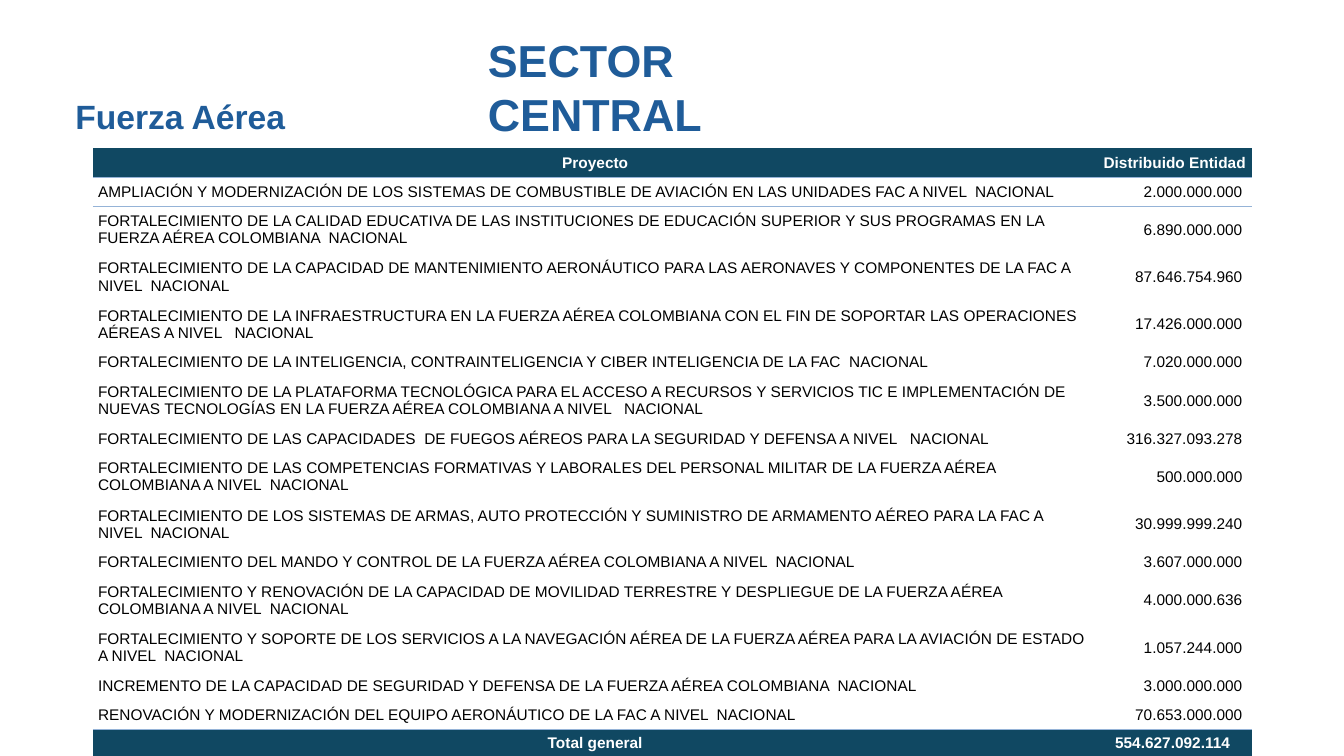
from dataclasses import dataclass

from lxml import etree
from pptx import Presentation
from pptx.dml.color import RGBColor
from pptx.enum.text import MSO_ANCHOR, MSO_AUTO_SIZE, PP_ALIGN
from pptx.oxml.ns import qn
from pptx.util import Cm, Pt

LEFT, MID, RIGHT = PP_ALIGN.LEFT, PP_ALIGN.CENTER, PP_ALIGN.RIGHT
TOP, CENTER = MSO_ANCHOR.TOP, MSO_ANCHOR.MIDDLE
GROW = MSO_AUTO_SIZE.SHAPE_TO_FIT_TEXT
PLAIN = "{2D5ABB26-0587-4C30-8999-92F81FD0307C}"


@dataclass(frozen=True)
class Theme:
    """Colours, font and type sizes of the slide."""
    font: str = "Arial"
    blue: str = "1F5C99"
    band: str = "104862"
    rule: str = "95B3D7"
    white: str = "FFFFFF"
    black: str = "000000"
    head: int = 32
    sub: int = 24
    cell: int = 11


LOOK = Theme()
HEAD = ("Proyecto", "Distribuido Entidad")
TOTAL = ("Total general", "554.627.092.114")
ITEMS = [
    ("AMPLIACIÓN Y MODERNIZACIÓN DE LOS SISTEMAS DE COMBUSTIBLE DE AVIACIÓN EN LAS UNIDADES FAC A NIVEL  NACIONAL", "2.000.000.000"),
    ("FORTALECIMIENTO DE LA CALIDAD EDUCATIVA DE LAS INSTITUCIONES DE EDUCACIÓN SUPERIOR Y SUS PROGRAMAS EN LA FUERZA AÉREA COLOMBIANA  NACIONAL", "6.890.000.000"),
    ("FORTALECIMIENTO DE LA CAPACIDAD DE MANTENIMIENTO AERONÁUTICO PARA LAS AERONAVES Y COMPONENTES DE LA FAC A NIVEL  NACIONAL", "87.646.754.960"),
    ("FORTALECIMIENTO DE LA INFRAESTRUCTURA EN LA FUERZA AÉREA COLOMBIANA CON EL FIN DE SOPORTAR LAS OPERACIONES AÉREAS A NIVEL   NACIONAL", "17.426.000.000"),
    ("FORTALECIMIENTO DE LA INTELIGENCIA, CONTRAINTELIGENCIA Y CIBER INTELIGENCIA DE LA FAC  NACIONAL", "7.020.000.000"),
    ("FORTALECIMIENTO DE LA PLATAFORMA TECNOLÓGICA PARA EL ACCESO A RECURSOS Y SERVICIOS TIC E IMPLEMENTACIÓN DE NUEVAS TECNOLOGÍAS EN LA FUERZA AÉREA COLOMBIANA A NIVEL   NACIONAL", "3.500.000.000"),
    ("FORTALECIMIENTO DE LAS CAPACIDADES  DE FUEGOS AÉREOS PARA LA SEGURIDAD Y DEFENSA A NIVEL   NACIONAL", "316.327.093.278"),
    ("FORTALECIMIENTO DE LAS COMPETENCIAS FORMATIVAS Y LABORALES DEL PERSONAL MILITAR DE LA FUERZA AÉREA COLOMBIANA A NIVEL  NACIONAL", "500.000.000"),
    ("FORTALECIMIENTO DE LOS SISTEMAS DE ARMAS, AUTO PROTECCIÓN Y SUMINISTRO DE ARMAMENTO AÉREO PARA LA FAC A NIVEL  NACIONAL", "30.999.999.240"),
    ("FORTALECIMIENTO DEL MANDO Y CONTROL DE LA FUERZA AÉREA COLOMBIANA A NIVEL  NACIONAL", "3.607.000.000"),
    ("FORTALECIMIENTO Y RENOVACIÓN DE LA CAPACIDAD DE MOVILIDAD TERRESTRE Y DESPLIEGUE DE LA FUERZA AÉREA COLOMBIANA A NIVEL  NACIONAL", "4.000.000.636"),
    ("FORTALECIMIENTO Y SOPORTE DE LOS SERVICIOS A LA NAVEGACIÓN AÉREA DE LA FUERZA AÉREA PARA LA AVIACIÓN DE ESTADO A NIVEL  NACIONAL", "1.057.244.000"),
    ("INCREMENTO DE LA CAPACIDAD DE SEGURIDAD Y DEFENSA DE LA FUERZA AÉREA COLOMBIANA  NACIONAL", "3.000.000.000"),
    ("RENOVACIÓN Y MODERNIZACIÓN DEL EQUIPO AERONÁUTICO DE LA FAC A NIVEL  NACIONAL", "70.653.000.000"),
]


def write(frame, text, size, color, bold=False, align=LEFT):
    """Put one formatted paragraph in a text frame."""
    para = frame.paragraphs[0]
    para.alignment = align
    run = para.add_run()
    run.text = text
    font = run.font
    font.name, font.size, font.bold = LOOK.font, Pt(size), bold
    font.color.rgb = RGBColor.from_string(color)


def place(shape, box, text, size):
    """Set a heading shape in its box and write its text."""
    shape.left, shape.top, shape.width, shape.height = map(Cm, box)
    frame = shape.text_frame
    frame.word_wrap, frame.auto_size = True, GROW
    frame.vertical_anchor = TOP
    write(frame, text, size, LOOK.blue, bold=True)


def edge(cell, tag):
    """Draw a thin rule on one side of a table cell."""
    line = etree.Element(qn(tag), w=str(Pt(0.75)))
    fill = etree.SubElement(line, qn("a:solidFill"))
    etree.SubElement(fill, qn("a:srgbClr"), val=LOOK.rule)
    cell.find(qn("a:tcPr")).insert(0, line)


def style(cell, text, band, align):
    """Fill and write one table cell."""
    cell.margin_left = cell.margin_right = Cm(0.13)
    cell.margin_top = cell.margin_bottom = Cm(0.13)
    cell.vertical_anchor = CENTER
    if band:
        cell.fill.solid()
        cell.fill.fore_color.rgb = RGBColor.from_string(LOOK.band)
    else:
        cell.fill.background()
    color = LOOK.white if band else LOOK.black
    write(cell.text_frame, text, LOOK.cell, color, bold=band, align=align)


def grid(slide):
    """Add the table of projects and amounts."""
    rows = [HEAD, *ITEMS, TOTAL]
    last = len(rows) - 1
    high = 0.61
    frame = slide.shapes.add_table(len(rows), 2, Cm(2.34), Cm(3.74),
                                   Cm(29.21), Cm(high * len(rows)))
    table = frame.table
    table.first_row = table.horz_banding = False
    next(frame.element.iter(qn("a:tableStyleId"))).text = PLAIN
    for col, wide in zip(table.columns, (25.32, 3.89)):
        col.width = Cm(wide)
    for num, (name, value) in enumerate(rows):
        table.rows[num].height = Cm(high)
        band = num in (0, last)
        style(table.cell(num, 0), name, band, MID if band else LEFT)
        style(table.cell(num, 1), f"{value} ", band, MID if band else RIGHT)
    lines = list(frame.element.iter(qn("a:tr")))
    for num, tag in ((0, "a:lnB"), (1, "a:lnT"),
                     (last - 1, "a:lnB"), (last, "a:lnT")):
        for cell in lines[num].iter(qn("a:tc")):
            edge(cell, tag)


def main():
    """Build and save the slide."""
    deck = Presentation()
    deck.slide_width, deck.slide_height = Cm(33.87), Cm(19.05)
    slide = deck.slides.add_slide(deck.slide_layouts[5])
    grid(slide)
    sub = slide.shapes.add_textbox(0, 0, 0, 0)
    place(sub, (1.65, 2.29, 10.74, 1.27), "Fuerza Aérea", LOOK.sub)
    place(slide.shapes.title, (12.04, 0.69, 10.74, 1.63),
          "SECTOR CENTRAL", LOOK.head)
    deck.save("out.pptx")


if __name__ == "__main__":
    main()
